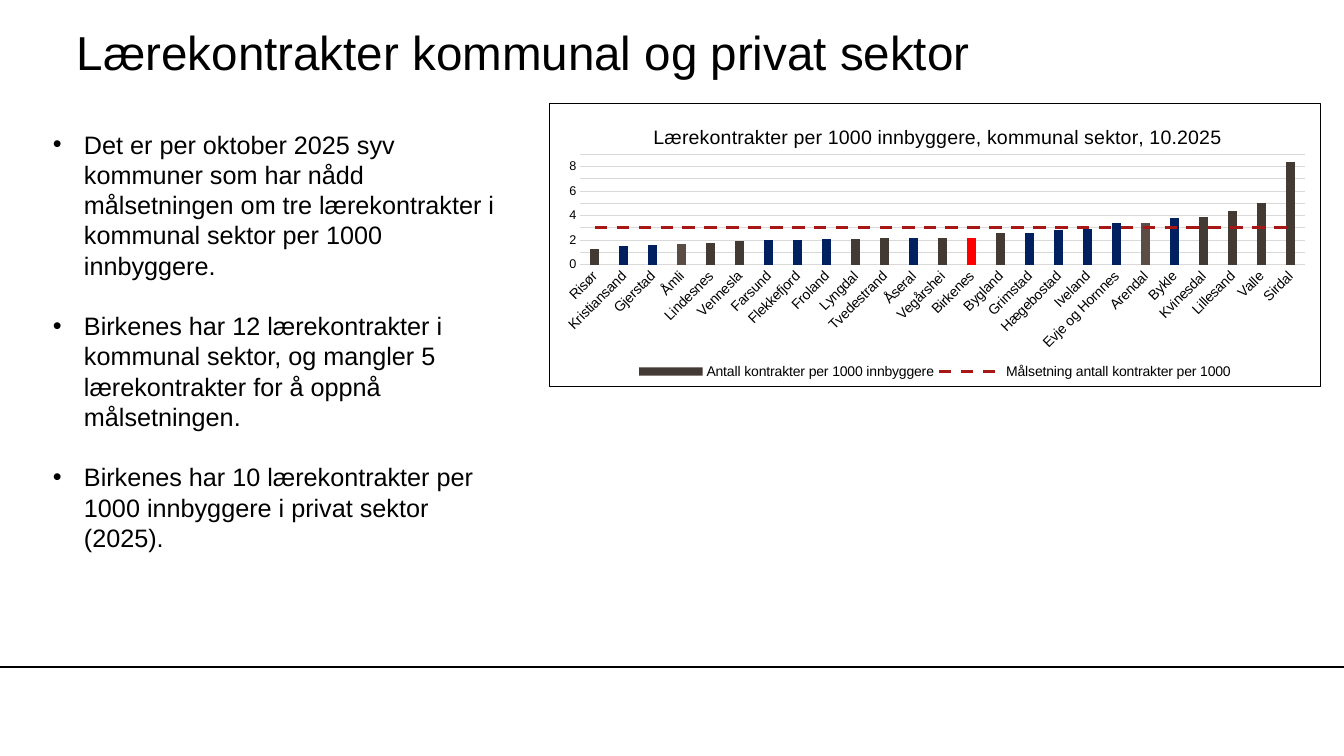
from lxml import etree
from pptx import Presentation
from pptx import util as u
from pptx.chart.data import CategoryChartData
from pptx.dml.color import RGBColor
from pptx.enum import chart as charts, dml, shapes, text
from pptx.oxml import parse_xml
from pptx.oxml.ns import nsdecls, qn

SCALE = 914400 / 100.8
BLACK, GREY, RED = "000000", "D9D9D9", "A71716"
BROWN, LIGHT_BROWN, NAVY, HIGHLIGHT = "443A34", "5B4D46", "002060", "FF0000"

TITLE = "Lærekontrakter kommunal og privat sektor"
POINTS = [
    "Det er per oktober 2025 syv kommuner som har nådd målsetningen om tre "
    "lærekontrakter i kommunal sektor per 1000 innbyggere.",
    "Birkenes har 12 lærekontrakter i kommunal sektor, og mangler 5 "
    "lærekontrakter for å oppnå målsetningen.",
    "Birkenes har 10 lærekontrakter per 1000 innbyggere i privat sektor (2025).",
]
CHART_TITLE = "Lærekontrakter per 1000 innbyggere, kommunal sektor, 10.2025"
CONTRACTS = {
    "Risør": 1.3, "Kristiansand": 1.5, "Gjerstad": 1.6, "Åmli": 1.7,
    "Lindesnes": 1.8, "Vennesla": 1.9, "Farsund": 2, "Flekkefjord": 2,
    "Froland": 2.1, "Lyngdal": 2.1, "Tvedestrand": 2.2, "Åseral": 2.2,
    "Vegårshei": 2.2, "Birkenes": 2.2, "Bygland": 2.6, "Grimstad": 2.6,
    "Hægebostad": 2.8, "Iveland": 2.9, "Evje og Hornnes": 3.4, "Arendal": 3.4,
    "Bykle": 3.8, "Kvinesdal": 3.9, "Lillesand": 4.4, "Valle": 5, "Sirdal": 8.4,
}
TARGET = 3
BAR_COLOURS = {"Åmli": LIGHT_BROWN, "Arendal": LIGHT_BROWN, "Birkenes": HIGHLIGHT}
BAR_COLOURS.update(dict.fromkeys(
    ["Kristiansand", "Gjerstad", "Farsund", "Flekkefjord", "Froland", "Åseral",
     "Grimstad", "Hægebostad", "Iveland", "Evje og Hornnes", "Bykle"], NAVY))


def px(*lengths):
    return [u.Emu(round(length * SCALE)) for length in lengths]


def colour(value):
    return RGBColor.from_string(value)


def style_font(font, size, value=BLACK):
    font.name, font.size, font.bold = "Arial", u.Pt(size), False
    font.color.rgb = colour(value)


def style_line(line, value, width=0.75):
    line.color.rgb = colour(value)
    line.width = u.Pt(width)


def set_layout(element, index, target=None, **fractions):
    for old in element.findall(qn("c:layout")):
        element.remove(old)
    layout = etree.Element(qn("c:layout"))
    manual = etree.SubElement(layout, qn("c:manualLayout"))
    if target:
        etree.SubElement(manual, qn("c:layoutTarget"), val=target)
    for side in "xy":
        etree.SubElement(manual, qn(f"c:{side}Mode"), val="edge")
    for name, value in fractions.items():
        etree.SubElement(manual, qn(f"c:{name}"), val=str(value))
    element.insert(index, layout)


def move_to_line_plot(bar_plot, series):
    line_plot = parse_xml(
        f'<c:lineChart {nsdecls("c")}><c:grouping val="standard"/>'
        '<c:varyColors val="0"/><c:marker val="1"/></c:lineChart>')
    for old in series.findall(qn("c:invertIfNegative")):
        series.remove(old)
    marker = etree.Element(qn("c:marker"))
    etree.SubElement(marker, qn("c:symbol"), val="none")
    series.find(qn("c:spPr")).addnext(marker)
    etree.SubElement(series, qn("c:smooth"), val="0")
    line_plot.insert(2, series)
    for axis in bar_plot.findall(qn("c:axId")):
        etree.SubElement(line_plot, qn("c:axId"), val=axis.get("val"))
    bar_plot.addnext(line_plot)


class Slide:
    def __init__(self, deck):
        self.page = deck.slides.add_slide(deck.slide_layouts[6])

    def line(self, left, top, right, bottom):
        rule = self.page.shapes.add_connector(
            shapes.MSO_CONNECTOR.STRAIGHT, *px(left, top, right, bottom))
        style_line(rule.line, BLACK)
        etree.SubElement(rule._element.spPr, qn("a:effectLst"))

    def text(self, lines, place, size, inset=(10, 5), bullets=False,
             anchor=text.MSO_ANCHOR.TOP, leading=None, gap=0):
        box = self.page.shapes.add_textbox(*px(*place)).text_frame
        box.word_wrap, box.vertical_anchor = True, anchor
        box.margin_left = box.margin_right = px(inset[0])[0]
        box.margin_top = box.margin_bottom = px(inset[1])[0]
        for number, words in enumerate(lines):
            para = box.add_paragraph() if number else box.paragraphs[0]
            if bullets:
                settings = para._p.get_or_add_pPr()
                indent = px(31)[0]
                settings.set("marL", str(indent))
                settings.set("indent", str(-indent))
                etree.SubElement(settings, qn("a:buFont"), typeface="Arial")
                etree.SubElement(settings, qn("a:buChar"), char="•")
            if leading:
                para.line_spacing = u.Pt(leading)
            para.space_before = u.Pt(gap if number else 0)
            span = para.add_run()
            span.text = words
            style_font(span.font, size)

    def contracts_chart(self, place):
        data = CategoryChartData(number_format="General")
        data.categories = list(CONTRACTS)
        data.add_series("Antall kontrakter per 1000 innbyggere", CONTRACTS.values())
        data.add_series("Målsetning antall kontrakter per 1000", [TARGET] * len(CONTRACTS))
        chart = self.page.shapes.add_chart(
            charts.XL_CHART_TYPE.COLUMN_CLUSTERED, *px(*place), data).chart
        style_font(chart.font, 10)
        chart._chartSpace.find(qn("c:chart")).addnext(parse_xml(
            f'<c:spPr {nsdecls("c", "a")}><a:noFill/><a:ln w="9525"><a:solidFill>'
            f'<a:srgbClr val="{BLACK}"/></a:solidFill></a:ln></c:spPr>'))
        self.headings(chart)
        self.axes(chart)
        self.series(chart)

    def headings(self, chart):
        chart.has_title = True
        para = chart.chart_title.text_frame.paragraphs[0]
        span = para.add_run()
        span.text = CHART_TITLE
        style_font(span.font, 14)
        set_layout(chart.chart_title._element, 1, x=0.13, y=0.06)
        chart.has_legend = True
        chart.legend.position = charts.XL_LEGEND_POSITION.BOTTOM
        chart.legend.include_in_layout = False
        style_font(chart.legend.font, 10)
        set_layout(chart.legend._element, 1, x=0.11, y=0.92, w=0.78, h=0.07)

    def axes(self, chart):
        names, values = chart.category_axis, chart.value_axis
        for axis, size in ((names, 10), (values, 9)):
            axis.major_tick_mark = axis.minor_tick_mark = charts.XL_TICK_MARK.NONE
            style_font(axis.tick_labels.font, size)
        style_line(names.format.line, GREY)
        names._element.find(qn("c:txPr")).find(qn("a:bodyPr")).set("rot", "-2700000")
        values.minimum_scale, values.maximum_scale, values.major_unit = 0, 9, 1
        values.tick_labels.number_format = "0"
        values.tick_labels.number_format_is_linked = False
        values.format.line.fill.background()
        values.has_major_gridlines = True
        style_line(values.major_gridlines.format.line, GREY)

    def series(self, chart):
        plot = chart.plots[0]
        plot.gap_width, plot.overlap, plot.vary_by_categories = 219, -27, False
        bars, target = plot.series
        bars.invert_if_negative = False
        bars.format.fill.solid()
        bars.format.fill.fore_color.rgb = colour(BROWN)
        for index, name in enumerate(CONTRACTS):
            if name in BAR_COLOURS:
                fill = bars.points[index].format.fill
                fill.solid()
                fill.fore_color.rgb = colour(BAR_COLOURS[name])
        style_line(target.format.line, RED, 2.25)
        target.format.line.dash_style = dml.MSO_LINE.DASH
        bar_plot = plot._element
        move_to_line_plot(bar_plot, target._element)
        set_layout(bar_plot.getparent(), 0, "inner", x=0.04, y=0.18, w=0.94, h=0.39)


def main():
    deck = Presentation()
    deck.slide_width, deck.slide_height = px(1344, 756)
    slide = Slide(deck)
    slide.line(0, 667, 1344, 667)
    slide.text([TITLE], (77, 13, 1119, 76), 34, inset=(0, 0),
               anchor=text.MSO_ANCHOR.MIDDLE)
    slide.text(POINTS, (43, 124, 479, 468), 18, bullets=True, leading=21.6, gap=21.6)
    slide.contracts_chart((549, 103, 772, 284))
    deck.save("out.pptx")


if __name__ == "__main__":
    main()
